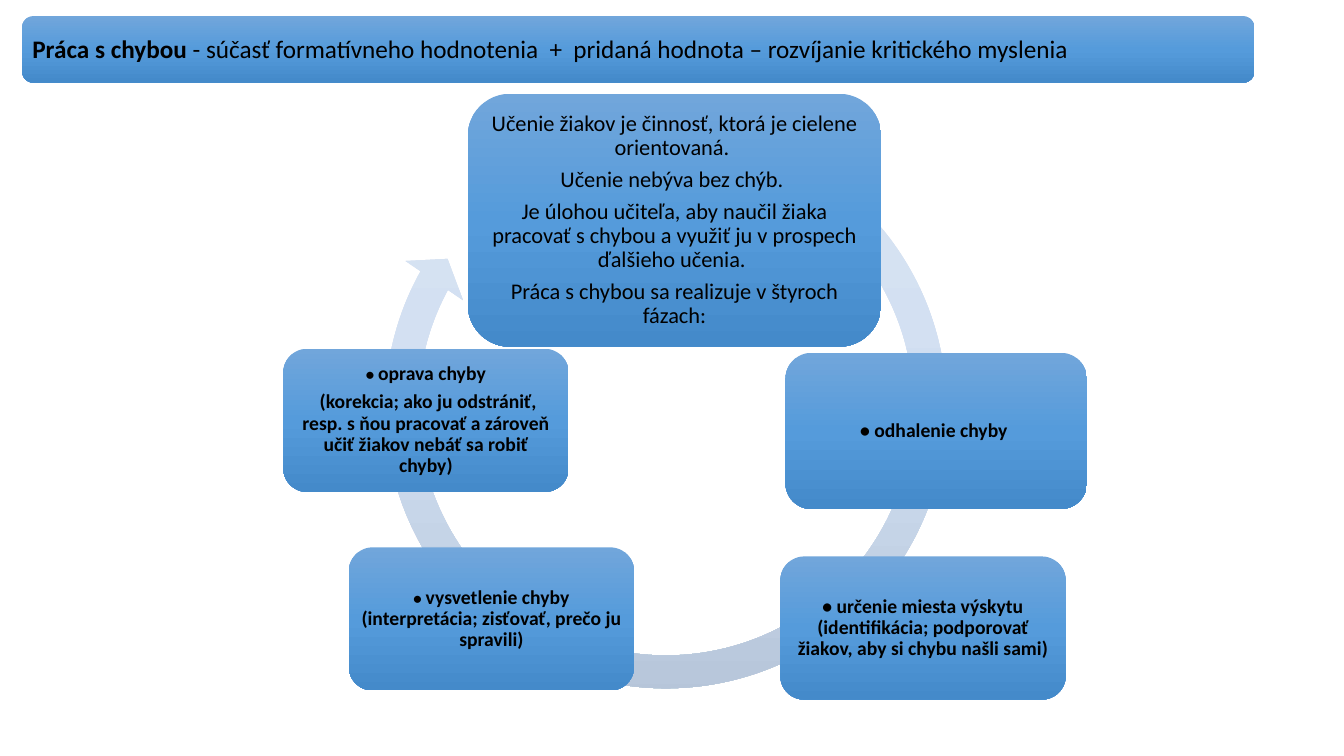
"""Builds a slide on working with mistakes as a five-step cycle."""
import copy

import pptx
import pptx.dml.color
import pptx.enum.shapes
import pptx.enum.text
import pptx.oxml.ns
import pptx.util

Inches = pptx.util.Inches
Pt = pptx.util.Pt
KIND = pptx.enum.shapes.MSO_SHAPE
ALIGN = pptx.enum.text.PP_ALIGN

COLORS = {
    "top": "71A6DB", "mid": "559BDB", "low": "448ACA",
    "pale": "DBE5F3", "mist": "D0DEF1", "haze": "B6C5D9",
    "ink": "000000",
}
BLUE = ("top", "mid", "low")
GRAY = ("pale", "mist", "haze")

STEPS = [
    ((4.64, 0.93, 4.1, 2.51), 0.07, [
        [("Učenie žiakov je činnosť, ktorá je cielene orientovaná. ", 16, False)],
        [("Učenie nebýva bez chýb. ", 16, False)],
        [("Je úlohou učiteľa, aby naučil žiaka pracovať s chybou a využiť ju "
          "v prospech ďalšieho učenia. ", 16, False)],
        [("Práca s chybou sa realizuje v štyroch fázach:", 16, False)],
    ]),
    ((7.79, 3.5, 2.99, 1.55), 0.06, [
        [("• odhalenie chyby ", 14, True)],
    ]),
    ((7.74, 5.52, 2.83, 1.42), 0.06, [
        [("• určenie miesta výskytu (identifikácia; podporovať žiakov, "
          "aby si chybu našli sami)", 14, True)],
    ]),
    ((3.46, 5.43, 2.83, 1.42), 0.05, [
        [("• ", 12, True),
         ("vysvetlenie chyby (interpretácia; zisťovať, prečo ju spravili)", 14, True)],
    ]),
    ((2.81, 3.46, 2.83, 1.42), 0.05, [
        [("• ", 12, True), ("oprava chyby", 14, True)],
        [(" (korekcia; ako ju odstrániť, resp. s ňou pracovať a zároveň "
          "učiť žiakov nebáť sa robiť chyby)", 14, True)],
    ]),
]
TITLE = [[
    ("Práca s chybou ", 18, True),
    ("- súčasť formatívneho hodnotenia  +  pridaná hodnota – "
     "rozvíjanie kritického myslenia", 18, False),
]]


def rgb(name):
    return pptx.dml.color.RGBColor.from_string(COLORS[name])


def assign(item, values):
    for key, value in values.items():
        setattr(item, key, value)


def shade(shape, names):
    shape.fill.gradient()
    shape.fill.gradient_angle = 270
    stops = shape.element.spPr.find(".//" + pptx.oxml.ns.qn("a:gsLst"))
    stops.insert(1, copy.deepcopy(stops[0]))
    for index, (stop, name) in enumerate(zip(shape.fill.gradient_stops, names)):
        stop.position = index / 2
        stop.color.rgb = rgb(name)


def add_form(slide, kind, box, names):
    shape = slide.shapes.add_shape(kind, *map(Inches, box))
    shape.shadow.inherit = False
    shape.line.fill.background()
    shade(shape, names)
    return shape


def write(shape, paras, inset, align):
    frame = shape.text_frame
    sides = ("left", "top", "right", "bottom")
    assign(frame, {f"margin_{side}": Inches(inset) for side in sides})
    assign(frame, {
        "word_wrap": True,
        "auto_size": pptx.enum.text.MSO_AUTO_SIZE.NONE,
        "vertical_anchor": pptx.enum.text.MSO_ANCHOR.MIDDLE,
    })
    for index, runs in enumerate(paras):
        para = frame.add_paragraph() if index else frame.paragraphs[0]
        assign(para, {
            "alignment": align, "line_spacing": 0.9,
            "space_before": Pt(0), "space_after": Pt(0.35 * runs[-1][1]),
        })
        for text, size, bold in runs:
            run = para.add_run()
            run.text = text
            assign(run.font, {"name": "Calibri", "size": Pt(size), "bold": bold})
            run.font.color.rgb = rgb("ink")


def add_title(slide):
    add_form(slide, KIND.ROUNDED_RECTANGLE, (0.22, 0.16, 12.22, 0.66), BLUE)
    title = slide.shapes.title
    assign(title, {
        "left": Inches(0.25), "top": Inches(0.2),
        "width": Inches(12.16), "height": Inches(0.59),
    })
    write(title, TITLE, 0.07, ALIGN.LEFT)
    slide.shapes.element.append(title.element)


def add_arrow(slide):
    arrow = add_form(slide, KIND.CIRCULAR_ARROW, (3.64, 1.08, 5.93, 5.93), GRAY)
    for index, value in enumerate((0.055, 3.307, 125.258, 182.028, 0.058)):
        arrow.adjustments[index] = value


def add_step(slide, box, inset, paras):
    step = add_form(slide, KIND.ROUNDED_RECTANGLE, box, BLUE)
    write(step, paras, inset, ALIGN.CENTER)


def main():
    deck = pptx.Presentation()
    assign(deck, {"slide_width": Inches(13.33), "slide_height": Inches(7.5)})
    slide = deck.slides.add_slide(deck.slide_layouts[5])
    add_arrow(slide)
    for box, inset, paras in STEPS:
        add_step(slide, box, inset, paras)
    add_title(slide)
    deck.save("out.pptx")


if __name__ == "__main__":
    main()
